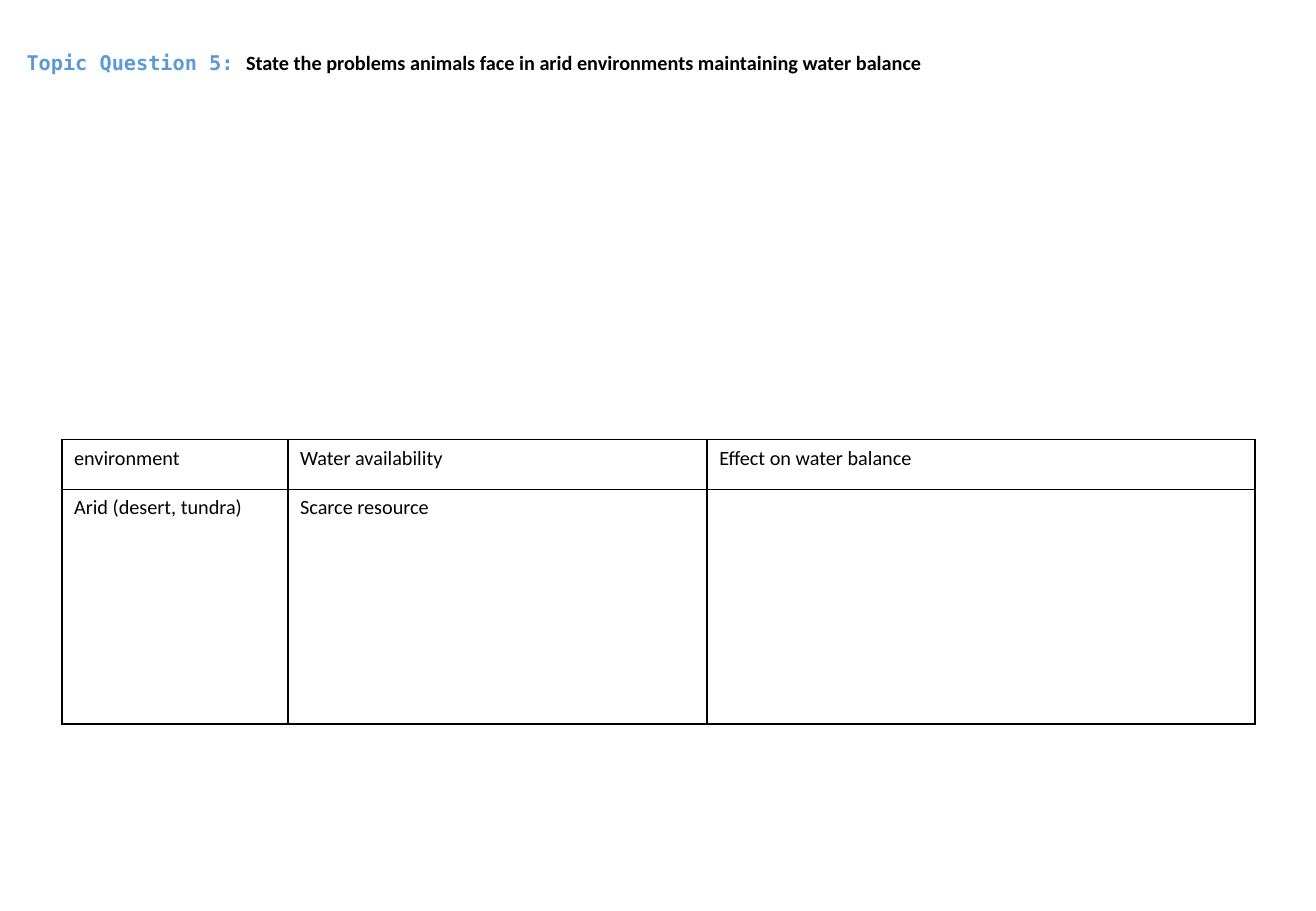
from lxml import etree
from pptx import Presentation
from pptx import util as u
from pptx.dml.color import RGBColor
from pptx.enum import text
from pptx.oxml import ns

BLUE = RGBColor(0x5B, 0x9B, 0xD5)
BLACK = RGBColor(0, 0, 0)
WIDTH, HEIGHT = 10.83, 7.5


def add_line(parent, tag, color, points, index):
    line = etree.Element(ns.qn(tag), w=str(u.Pt(points)))
    fill = etree.SubElement(line, ns.qn("a:solidFill"))
    etree.SubElement(fill, ns.qn("a:srgbClr"), val=str(color))
    parent.insert(index, line)


def add_run(paragraph, wording, color, font_format):
    run = paragraph.add_run()
    run.text = wording
    for name, value in font_format.items():
        setattr(run.font, name, value)
    run.font.color.rgb = color
    return run


presentation = Presentation()
presentation.slide_width = u.Inches(WIDTH)
presentation.slide_height = u.Inches(HEIGHT)
slide = presentation.slides.add_slide(presentation.slide_layouts[6])

body = {"name": "Calibri", "size": u.Pt(12)}
heading = {**body, "bold": True}
label = {**heading, "name": "DejaVu Sans Mono"}

title = slide.shapes.add_textbox(
    u.Inches(0.12), u.Inches(0.14), u.Inches(8.59), u.Inches(HEIGHT / 10))
title.text_frame.word_wrap = True
title.text_frame.vertical_anchor = text.MSO_ANCHOR.MIDDLE
paragraph = title.text_frame.paragraphs[0]
topic = add_run(paragraph, "Topic Question 5: ", BLUE, label)
add_line(topic.font._element, "a:ln", BLUE, 0.8, 0)
add_run(paragraph, "State the problems animals face in arid environments maintaining water balance",
        BLACK, heading)

columns = [1.86, 3.45, 4.51]
rows = [0.41, 1.93]
wordings = [
    ["environment", "Water availability", "Effect on water balance"],
    ["Arid (desert, tundra)", "Scarce resource", ""],
]
table = slide.shapes.add_table(
    len(rows), len(columns), u.Inches(0.51), u.Inches(3.62),
    u.Inches(sum(columns)), u.Inches(sum(rows))).table
table.first_row = table.horz_banding = False
for column, width in zip(table.columns, columns):
    column.width = u.Inches(width)
for row, height, row_wordings in zip(table.rows, rows, wordings):
    row.height = u.Inches(height)
    for cell, wording in zip(row.cells, row_wordings):
        cell.fill.background()
        if wording:
            add_run(cell.text_frame.paragraphs[0], wording, BLACK, body)
        properties = cell._tc.get_or_add_tcPr()
        for index, side in enumerate(["L", "R", "T", "B"]):
            add_line(properties, f"a:ln{side}", BLACK, 1, index)

presentation.save("out.pptx")
